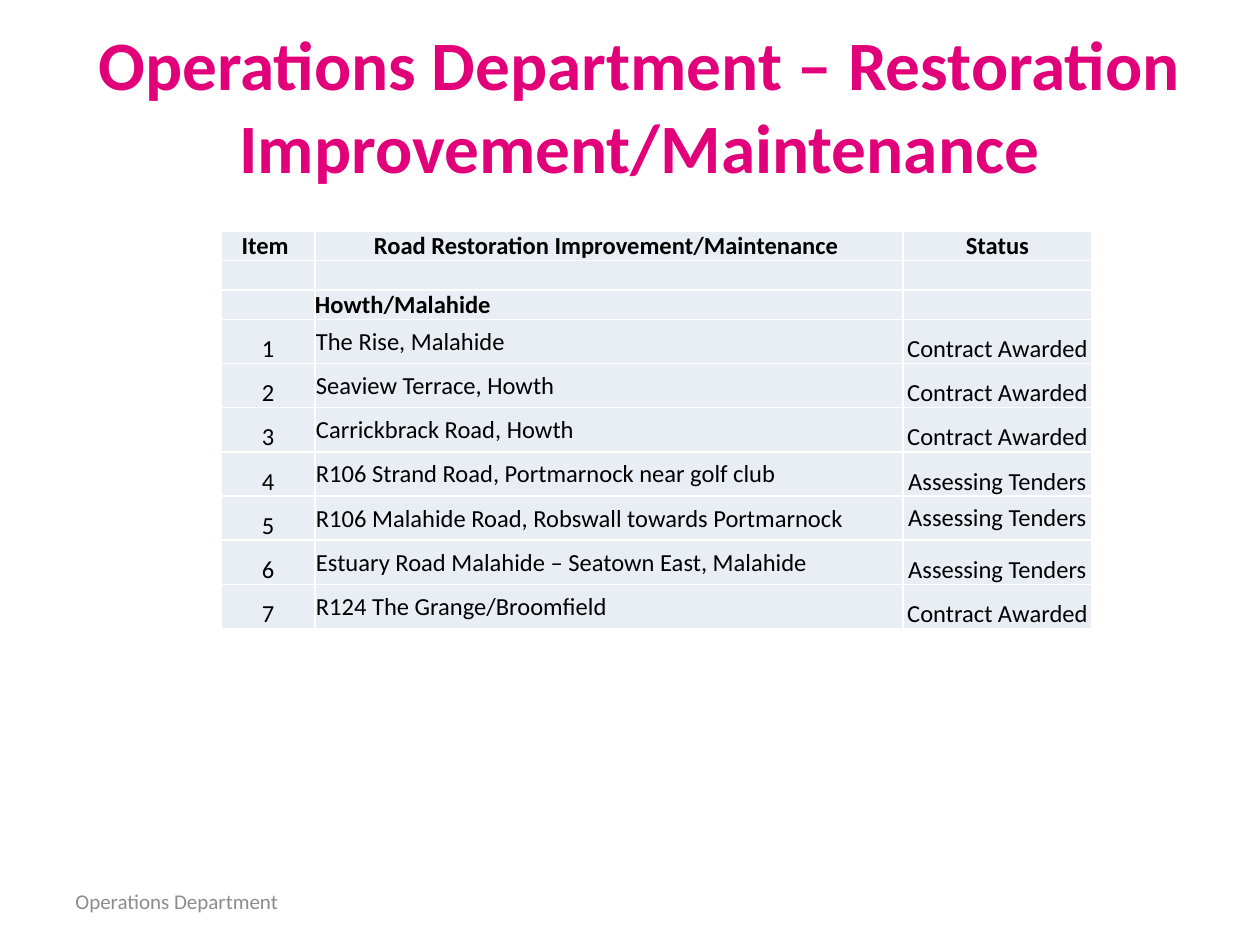
from lxml import etree
from pptx import Presentation
from pptx.dml.color import RGBColor
from pptx.enum.text import MSO_ANCHOR, MSO_AUTO_SIZE, PP_ALIGN
from pptx.oxml.ns import qn
from pptx.util import Pt

MIDDLE = MSO_ANCHOR.MIDDLE
NO_FIT = MSO_AUTO_SIZE.NONE
LEFT, CENTER = PP_ALIGN.LEFT, PP_ALIGN.CENTER

TITLE = "Operations Department – Restoration Improvement/Maintenance"
FOOTER = "Operations Department"
HEADER = ("Item ", "Road Restoration Improvement/Maintenance ", "Status")
AREA = "Howth/Malahide"
AWARDED, ASSESSING = "Contract Awarded", "Assessing Tenders"
ROADS = [
    ("The Rise, Malahide", AWARDED),
    ("Seaview Terrace, Howth", AWARDED),
    ("Carrickbrack Road, Howth", AWARDED),
    ("R106 Strand Road, Portmarnock near golf club", ASSESSING),
    ("R106 Malahide Road, Robswall towards Portmarnock", ASSESSING),
    ("Estuary Road Malahide – Seatown East, Malahide", ASSESSING),
    ("R124 The Grange/Broomfield", AWARDED),
]
SINGLE_SPACED_STATUS = 5

COLORS = {"title": "E2007A", "text": "000000", "footer": "8C8C8C",
          "cell": "E9EDF4", "border": "FFFFFF"}
FONT = "Calibri"
SLIDE = (1260, 945)
TITLE_BOX = (72, 40, 1135, 129)
FOOTER_BOX = (63, 876, 357, 50)
TABLE_AT = (221, 231)
COLUMNS = (94, 588, 189)
HEAD_ROW, ROAD_ROW = 29, 44
HEAD_ROWS = 3
ROAD_INSET = 1
SCALE = 914400 / 126


def emu(px):
    return round(px * SCALE)


def place(shape, box):
    for name, px in zip(("left", "top", "width", "height"), box):
        setattr(shape, name, emu(px))


def write(frame, text, size, color, bold=False, align=LEFT, spacing=None):
    para = frame.paragraphs[0]
    para.alignment = align
    para.line_spacing = spacing
    span = para.add_run()
    span.text = text
    values = {"name": FONT, "size": Pt(size), "bold": bold}
    for name, value in values.items():
        setattr(span.font, name, value)
    span.font.color.rgb = RGBColor.from_string(COLORS[color])


def add_borders(cell):
    properties = cell._tc.get_or_add_tcPr()
    for index, side in enumerate(("lnL", "lnR", "lnT", "lnB")):
        line = etree.Element(qn(f"a:{side}"), w=str(Pt(1)))
        fill = etree.SubElement(line, qn("a:solidFill"))
        etree.SubElement(fill, qn("a:srgbClr"), val=COLORS["border"])
        properties.insert(index, line)


def format_cell(cell, inset):
    values = {"margin_left": inset, "margin_right": inset,
              "margin_top": inset, "margin_bottom": 0}
    for name, px in values.items():
        setattr(cell, name, emu(px))
    cell.vertical_anchor = MIDDLE
    cell.fill.solid()
    cell.fill.fore_color.rgb = RGBColor.from_string(COLORS["cell"])
    add_borders(cell)


def add_road_table(page):
    rows = [HEADER, ("", "", ""), ("", AREA, "")]
    rows += [(str(item), *road) for item, road in enumerate(ROADS, 1)]
    heights = [HEAD_ROW] * HEAD_ROWS + [ROAD_ROW] * len(ROADS)
    box = (*TABLE_AT, sum(COLUMNS), sum(heights))
    table = page.shapes.add_table(len(rows), len(COLUMNS), *map(emu, box)).table
    for column, width in zip(table.columns, COLUMNS):
        column.width = emu(width)
    for row, height in zip(table.rows, heights):
        row.height = emu(height)
    for r, texts in enumerate(rows):
        is_road = r >= HEAD_ROWS
        for c, text in enumerate(texts):
            cell = table.cell(r, c)
            is_name = c == 1
            format_cell(cell, ROAD_INSET if is_road and is_name else 0)
            if not text:
                para = cell.text_frame.paragraphs[0]
                etree.SubElement(para._p, qn("a:endParaRPr"), sz="1400")
                continue
            single = c == 2 and r - HEAD_ROWS + 1 == SINGLE_SPACED_STATUS
            write(cell.text_frame, text, 14, "text", bold=not is_road,
                  align=LEFT if is_name and r else CENTER,
                  spacing=1.5 if is_road and not is_name and not single else None)


def main():
    deck = Presentation()
    deck.slide_width, deck.slide_height = map(emu, SLIDE)
    page = deck.slides.add_slide(deck.slide_layouts.get_by_name("Title Only"))

    footer = page.shapes.add_textbox(*map(emu, FOOTER_BOX)).text_frame
    footer.word_wrap = True
    footer.vertical_anchor = MIDDLE
    write(footer, FOOTER, 12, "footer")

    add_road_table(page)

    title = page.shapes.title
    place(title, TITLE_BOX)
    title.text_frame.auto_size = NO_FIT
    title.text_frame.vertical_anchor = MIDDLE
    write(title.text_frame, TITLE, 39.6, "title", bold=True, align=CENTER)

    deck.save("out.pptx")


if __name__ == "__main__":
    main()
